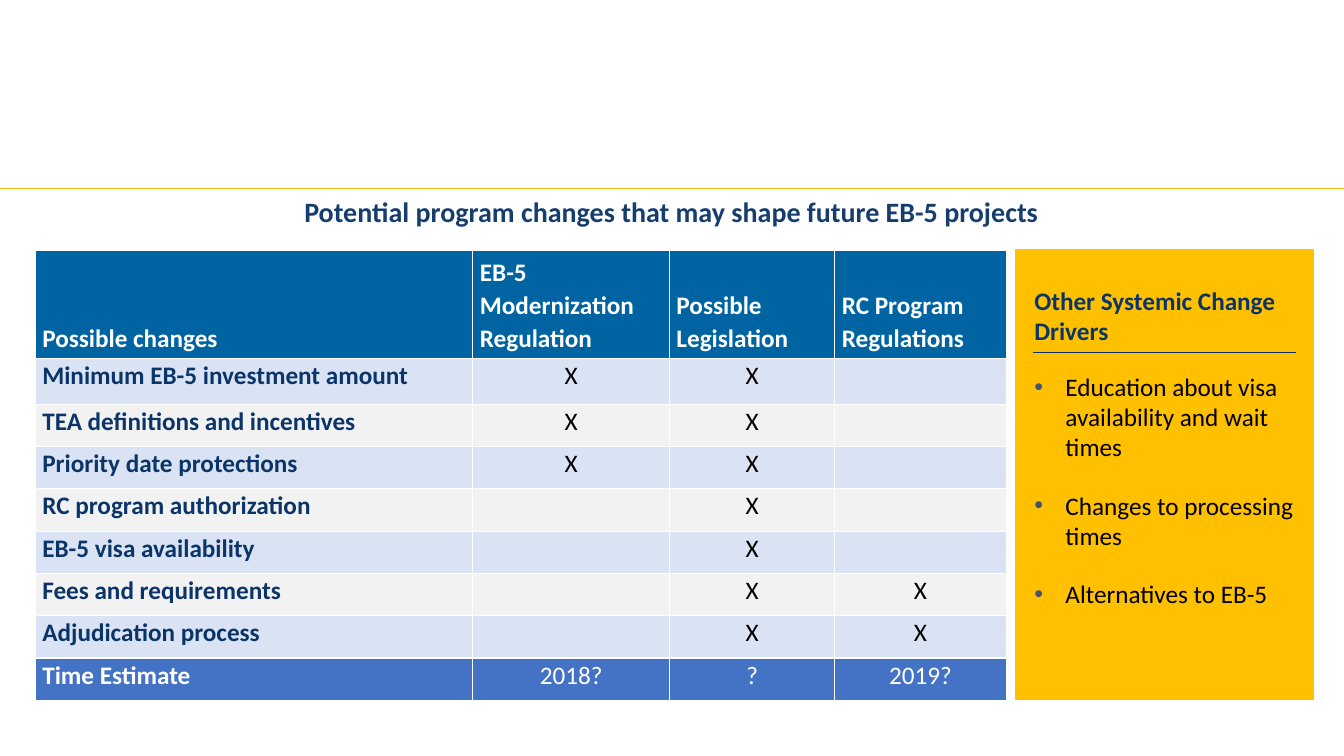
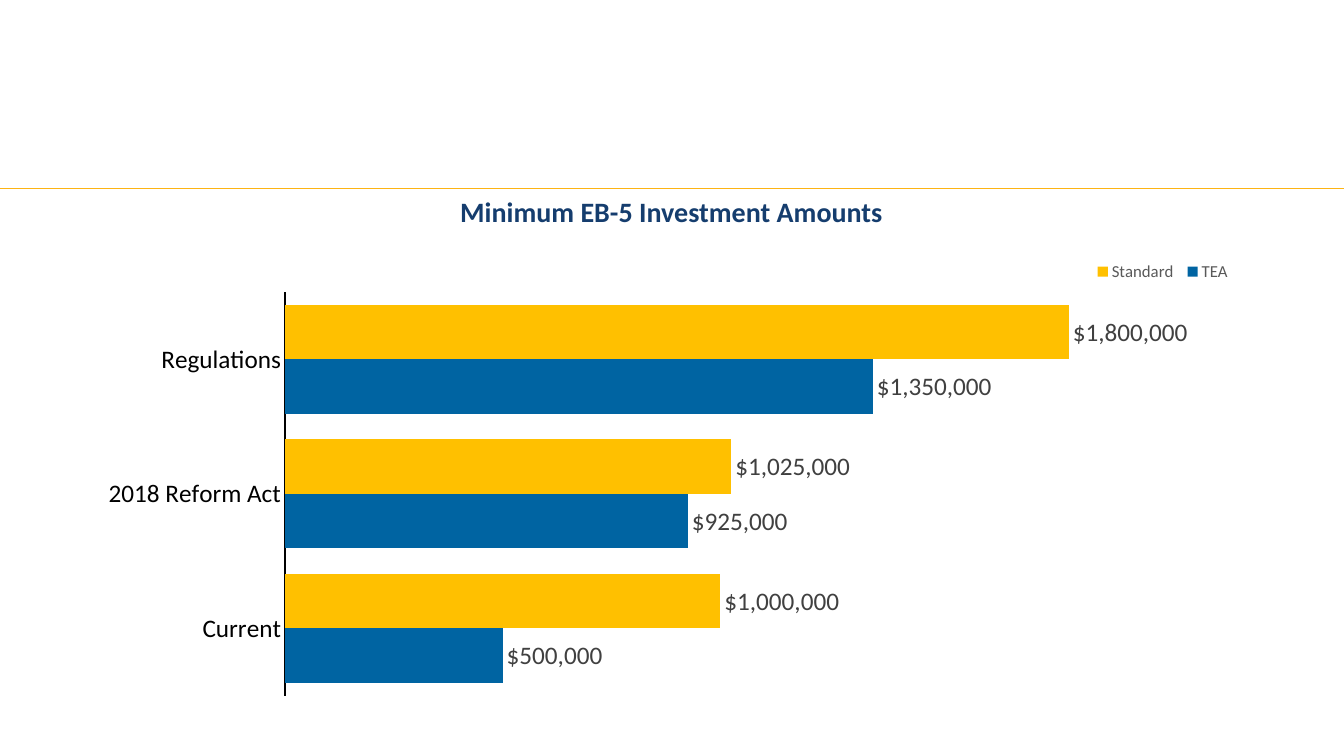
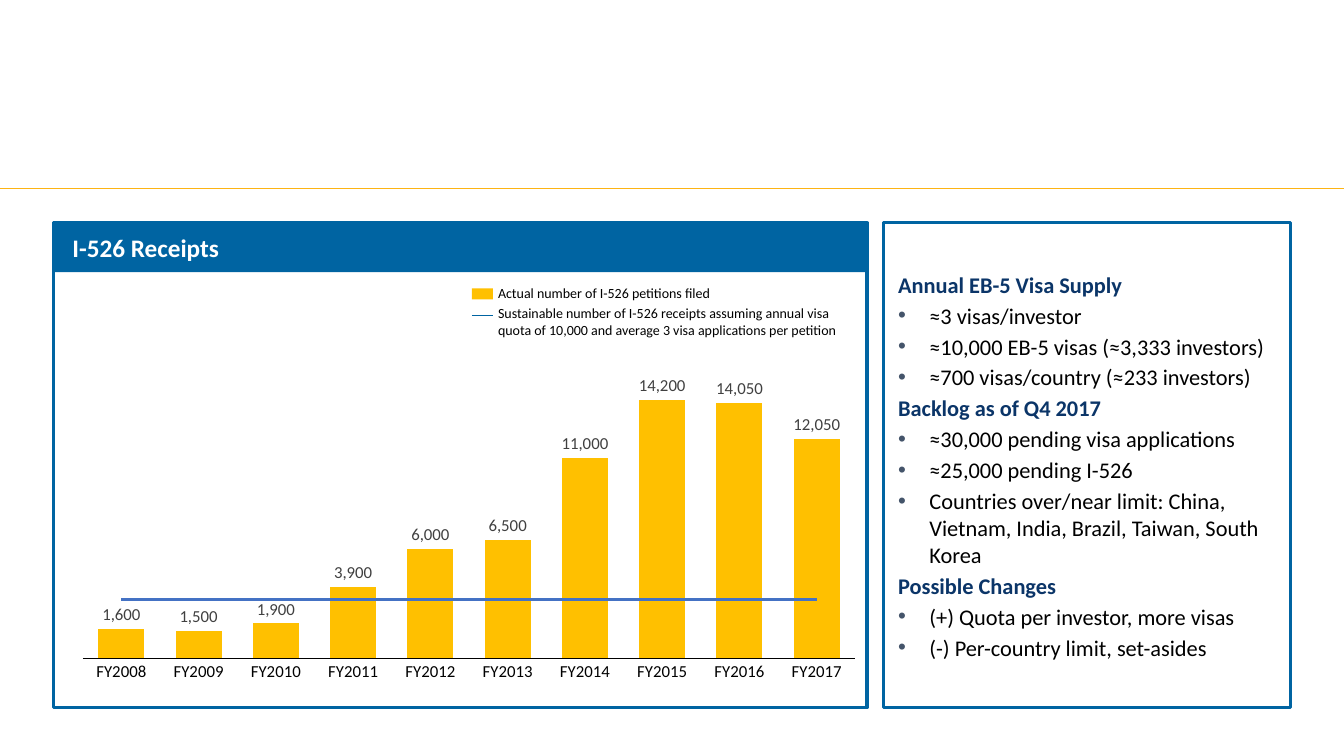
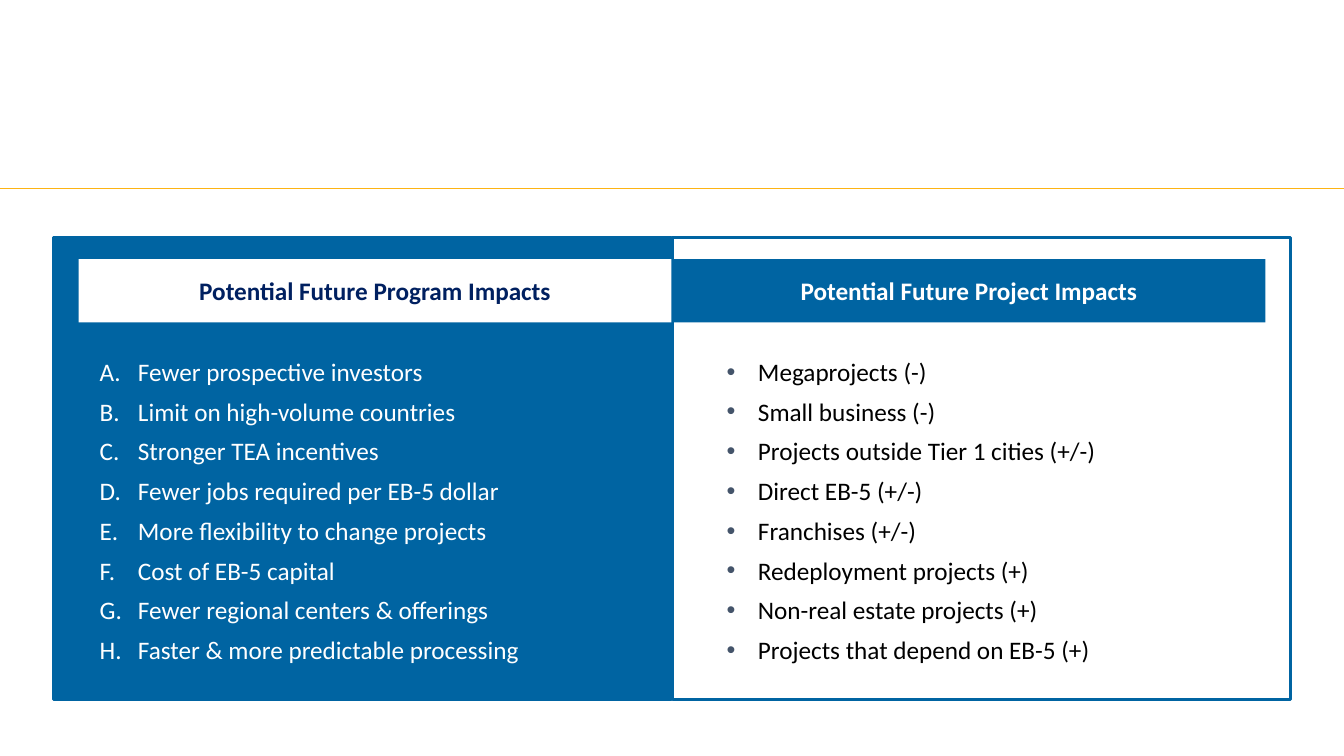
from lxml import etree
from pptx import Presentation
from pptx.chart.data import CategoryChartData
from pptx.dml.color import RGBColor
from pptx.enum.chart import XL_CHART_TYPE, XL_LABEL_POSITION, XL_LEGEND_POSITION, XL_MARKER_STYLE, XL_TICK_MARK
from pptx.enum.shapes import MSO_CONNECTOR, MSO_SHAPE
from pptx.enum.text import MSO_ANCHOR, PP_ALIGN
from pptx.oxml.ns import qn
from pptx.util import Inches, Pt

BLUE = RGBColor(0x00, 0x64, 0xA2)
GOLD = RGBColor(0xFF, 0xC0, 0x00)
RULE_GOLD = RGBColor(0xFD, 0xB4, 0x14)
NAVY = RGBColor(0x0B, 0x35, 0x68)
TITLE_NAVY = RGBColor(0x15, 0x3D, 0x6E)
DARK_NAVY = RGBColor(0x00, 0x20, 0x60)
MID_BLUE = RGBColor(0x44, 0x72, 0xC4)
PALE_BLUE = RGBColor(0xDA, 0xE3, 0xF3)
PALE_GRAY = RGBColor(0xF2, 0xF2, 0xF2)
SLATE = RGBColor(0x44, 0x54, 0x6A)
LABEL_GRAY = RGBColor(0x40, 0x40, 0x40)
LEGEND_GRAY = RGBColor(0x59, 0x59, 0x59)
WHITE = RGBColor(0xFF, 0xFF, 0xFF)
BLACK = RGBColor(0x00, 0x00, 0x00)

FONT = "Calibri"
BAR = XL_CHART_TYPE.BAR_CLUSTERED
COLUMN = XL_CHART_TYPE.COLUMN_CLUSTERED
OUTSIDE_END = XL_LABEL_POSITION.OUTSIDE_END
LEGEND_BOTTOM = XL_LEGEND_POSITION.BOTTOM
NO_MARKER = XL_MARKER_STYLE.NONE
NO_TICK = XL_TICK_MARK.NONE
STRAIGHT = MSO_CONNECTOR.STRAIGHT
RECT = MSO_SHAPE.RECTANGLE
TOP, MIDDLE, BOTTOM = MSO_ANCHOR.TOP, MSO_ANCHOR.MIDDLE, MSO_ANCHOR.BOTTOM
LEFT, CENTER = PP_ALIGN.LEFT, PP_ALIGN.CENTER

SLIDE_W = 13.33
BULLET = {"tag": "a:buChar", "attrs": {"char": "•"}, "color": SLATE, "indent": 0.31}
LETTER = {"tag": "a:buAutoNum", "attrs": {"type": "alphaUcPeriod"}, "color": WHITE, "indent": 0.38}
NO_INSETS = dict.fromkeys(("margin_left", "margin_top", "margin_right", "margin_bottom"), 0)

CHANGES = [
    ("Possible changes", "EB-5 Modernization Regulation", "Possible Legislation", "RC Program Regulations"),
    ("Minimum EB-5 investment amount", "X", "X", ""),
    ("TEA definitions and incentives", "X", "X", ""),
    ("Priority date protections", "X", "X", ""),
    ("RC program authorization", "", "X", ""),
    ("EB-5 visa availability", "", "X", ""),
    ("Fees and requirements", "", "X", "X"),
    ("Adjudication process", "", "X", "X"),
    ("Time Estimate", "2018?", "?", "2019?"),
]
DRIVERS = [
    ("Other Systemic Change Drivers", [
        "Education about visa availability and wait times",
        "Changes to processing times",
        "Alternatives to EB-5",
    ]),
]
SUPPLY = [
    ("Annual EB-5 Visa Supply", [
        "≈3 visas/investor",
        "≈10,000 EB-5 visas (≈3,333 investors)",
        "≈700 visas/country (≈233 investors)",
    ]),
    ("Backlog as of Q4 2017", [
        "≈30,000 pending visa applications",
        "≈25,000 pending I-526",
        "Countries over/near limit: China, Vietnam, India, Brazil, Taiwan, South Korea",
    ]),
    ("Possible Changes", [
        "(+) Quota per investor, more visas",
        "(-) Per-country limit, set-asides",
    ]),
]
PROGRAM_IMPACTS = [
    "Fewer prospective investors",
    "Limit on high-volume countries",
    "Stronger TEA incentives",
    "Fewer jobs required per EB-5 dollar",
    "More flexibility to change projects",
    "Cost of EB-5 capital",
    "Fewer regional centers & offerings",
    "Faster & more predictable processing",
]
PROJECT_IMPACTS = [
    "Megaprojects (-)",
    "Small business (-)",
    "Projects outside Tier 1 cities (+/-)",
    "Direct EB-5 (+/-)",
    "Franchises (+/-)",
    "Redeployment projects (+)",
    "Non-real estate projects (+)",
    "Projects that depend on EB-5 (+)",
]
RECEIPTS = [1600, 1500, 1900, 3900, 6000, 6500, 11000, 14200, 14050, 12050]


def box(*lengths):
    return [Inches(n) for n in lengths]


def apply(obj, values):
    for name, value in values.items():
        setattr(obj, name, value)


def set_font(font, size, color, bold=False):
    apply(font, {"name": FONT, "size": Pt(size), "bold": bold})
    font.color.rgb = color


def set_bullet(p, bullet):
    pPr = p._p.get_or_add_pPr()
    indent = Inches(bullet["indent"])
    pPr.set("marL", str(indent))
    pPr.set("indent", str(-indent))
    color = etree.SubElement(pPr, qn("a:buClr"))
    etree.SubElement(color, qn("a:srgbClr"), val=str(bullet["color"]))
    etree.SubElement(pPr, qn("a:buFont"), typeface="Arial" if bullet is BULLET else FONT)
    etree.SubElement(pPr, qn(bullet["tag"]), **bullet["attrs"])


def write(p, text, size, color, bold=False, bullet=None, **fmt):
    if bullet:
        set_bullet(p, bullet)
    apply(p, fmt)
    r = p.add_run()
    r.text = text
    set_font(r.font, size, color, bold)


def add_text(slide, at, items, size, gap=0, anchor=MIDDLE, after=0, **frame):
    tf = slide.shapes.add_textbox(*box(*at)).text_frame
    apply(tf, {"word_wrap": True, "vertical_anchor": anchor, **frame})
    for i, item in enumerate(items):
        p = tf.paragraphs[0] if i == 0 else tf.add_paragraph()
        spacing = {"space_before": Pt(gap if i else 0)}
        if after and item.get("bullet"):
            spacing["space_after"] = Pt(after)
        write(p, size=size, **spacing, **item)


def listing(texts, color, bullet=None):
    return [{"text": text, "color": color, "bullet": bullet} for text in texts]


def sections(groups):
    items = []
    for heading, points in groups:
        items.append({"text": heading, "color": NAVY, "bold": True})
        items += listing(points, BLACK, BULLET)
    return items


def add_label(slide, at, text, size, color, align=LEFT, **frame):
    add_text(slide, at, [{"text": text, "color": color, "bold": True, "alignment": align}], size, **frame)


def add_rect(slide, at, fill, line=None, width=2.25):
    sp = slide.shapes.add_shape(RECT, *box(*at))
    sp.shadow.inherit = False
    sp.fill.solid()
    sp.fill.fore_color.rgb = fill
    if line is None:
        sp.line.fill.background()
    else:
        sp.line.color.rgb = line
        sp.line.width = Pt(width)


def add_rule(slide, x, y, length, color, width=0.5):
    line = slide.shapes.add_connector(STRAIGHT, *box(x, y, x + length, y))
    line.line.color.rgb = color
    line.line.width = Pt(width)
    etree.SubElement(line._element.spPr, qn("a:effectLst"))


def new_slide(prs, title=None):
    slide = prs.slides.add_slide(prs.slide_layouts[6])
    add_rule(slide, 0, 1.87, SLIDE_W, RULE_GOLD)
    if title:
        item = {"text": title, "color": TITLE_NAVY, "bold": True, "alignment": CENTER, "line_spacing": 0.9}
        add_text(slide, (0.26, 1.97, 12.8, 0.3), [item], 20, anchor=TOP, **NO_INSETS)
    return slide


def add_changes_table(slide):
    widths = (4.34, 1.95, 1.64, 1.7)
    heights = (1.08, 0.45) + (0.42,) * 7
    last = len(CHANGES) - 1
    table = slide.shapes.add_table(len(CHANGES), len(widths), *box(0.35, 2.48, sum(widths), sum(heights))).table
    table.horz_banding = False
    for column, width in zip(table.columns, widths):
        column.width = Inches(width)
    for i, (row, height, texts) in enumerate(zip(table.rows, heights, CHANGES)):
        row.height = Inches(height)
        header = i == 0
        fill = BLUE if header else MID_BLUE if i == last else PALE_BLUE if i % 2 else PALE_GRAY
        edge = Inches(0.05 if header else 0)
        for j, (cell, text) in enumerate(zip(row.cells, texts)):
            apply(cell, {
                "margin_left": Inches(0.07), "margin_right": Inches(0.07),
                "margin_top": edge, "margin_bottom": edge,
                "vertical_anchor": BOTTOM if header else TOP,
            })
            cell.fill.solid()
            cell.fill.fore_color.rgb = fill
            color = WHITE if header or i == last else BLACK if j else NAVY
            if text:
                write(cell.text_frame.paragraphs[0], text, 18, color, header or j == 0,
                      alignment=CENTER if j and not header else LEFT, line_spacing=1.07)


def set_layout(parent, index, x, y, w, h, inner=False):
    for old in parent.findall(qn("c:layout")):
        parent.remove(old)
    layout = etree.Element(qn("c:layout"))
    manual = etree.SubElement(layout, qn("c:manualLayout"))
    values = {"layoutTarget": "inner"} if inner else {}
    values.update(xMode="edge", yMode="edge", x=x, y=y, w=w, h=h)
    for name, value in values.items():
        etree.SubElement(manual, qn("c:" + name), val=str(value))
    parent.insert(index, layout)


def add_bars(slide, kind, at, cats, series, size, maximum, gap, overlap, plot_at):
    data = CategoryChartData()
    data.categories = cats
    for name, values in series:
        data.add_series(name, values)
    chart = slide.shapes.add_chart(kind, *box(*at), data).chart
    apply(chart, {"has_title": False, "has_legend": False})
    set_font(chart.font, size, BLACK)
    apply(chart.value_axis, {
        "visible": False, "has_major_gridlines": False, "minimum_scale": 0, "maximum_scale": maximum,
    })
    axis = chart.category_axis
    apply(axis, {"major_tick_mark": NO_TICK, "minor_tick_mark": NO_TICK})
    axis.format.line.color.rgb = BLACK
    axis.format.line.width = Pt(0.75)
    set_font(axis.tick_labels.font, size, BLACK)
    apply(chart.plots[0], {"gap_width": gap, "overlap": overlap, "vary_by_categories": False})
    set_layout(chart._chartSpace.chart.plotArea, 0, *plot_at, inner=True)
    return chart


def style_bars(ser, color, size, number_format):
    ser.format.fill.solid()
    ser.format.fill.fore_color.rgb = color
    labels = ser.data_labels
    apply(labels, {
        "show_value": True, "position": OUTSIDE_END,
        "number_format": number_format, "number_format_is_linked": False,
    })
    set_font(labels.font, size, LABEL_GRAY)


def second_series_as_line(chart, color):
    bars = chart._chartSpace.chart.plotArea.find(qn("c:barChart"))
    ser = bars.findall(qn("c:ser"))[1]
    for invert in ser.findall(qn("c:invertIfNegative")):
        ser.remove(invert)
    lines = bars.makeelement(qn("c:lineChart"))
    etree.SubElement(lines, qn("c:grouping"), val="standard")
    etree.SubElement(lines, qn("c:varyColors"), val="0")
    lines.append(ser)
    etree.SubElement(lines, qn("c:marker"), val="1")
    for axis in bars.findall(qn("c:axId")):
        etree.SubElement(lines, qn("c:axId"), val=axis.get("val"))
    bars.addnext(lines)
    line = chart.plots[1].series[0]
    line.smooth = False
    line.marker.style = NO_MARKER
    line.format.line.color.rgb = color
    line.format.line.width = Pt(2.25)


def changes_slide(prs):
    slide = new_slide(prs, "Potential program changes that may shape future EB-5 projects")
    add_rect(slide, (10.07, 2.48, 2.96, 4.46), GOLD, GOLD, 1)
    add_changes_table(slide)
    add_text(slide, (10.16, 2.69, 2.77, 3.49), sections(DRIVERS), 18, gap=18, after=2)
    add_rule(slide, 10.25, 3.5, 2.6, NAVY)


def amounts_slide(prs):
    slide = new_slide(prs, "Minimum EB-5 Investment Amounts")
    series = [("TEA", (500000, 925000, 1350000)), ("Standard", (1000000, 1025000, 1800000))]
    chart = add_bars(slide, BAR, (1.07, 2.44, 11.19, 4.62), ("Current", "2018 Reform Act", "Regulations"),
                     series, 18, 2000000, 47, 0, (0.157, 0.099, 0.772, 0.867))
    for ser, color in zip(chart.plots[0].series, (BLUE, GOLD)):
        style_bars(ser, color, 18, '"$"#,##0')
    chart.has_legend = True
    legend = chart.legend
    apply(legend, {"position": LEGEND_BOTTOM, "include_in_layout": False})
    set_font(legend.font, 12, LEGEND_GRAY)
    set_layout(legend._element, 1, 0.87, 0.02, 0.13, 0.07)


def receipts_slide(prs):
    slide = new_slide(prs)
    for x, width in ((8.76, 4.04), (0.53, 8.07)):
        add_rect(slide, (x, 2.21, width, 4.81), WHITE, BLUE)
    add_text(slide, (8.81, 2.55, 3.93, 4.14), sections(SUPPLY), 16, gap=2.9)
    add_rect(slide, (0.53, 2.21, 8.07, 0.49), BLUE)
    add_label(slide, (0.62, 2.26, 6.59, 0.4), "I-526 Receipts", 18, WHITE)
    years = [f"FY{year}" for year in range(2008, 2018)]
    series = [("Series 1", RECEIPTS), ("Series 2", [3200] * len(years))]
    chart = add_bars(slide, COLUMN, (0.64, 3.62, 7.86, 3.28), years, series, 12, 16000, 68, -27,
                     (0.023, 0.007, 0.975, 0.88))
    second_series_as_line(chart, MID_BLUE)
    style_bars(chart.plots[0].series[0], GOLD, 12, "#,##0")
    legend = listing([
        "Actual number of I-526 petitions filed",
        "Sustainable number of I-526 receipts assuming annual visa quota of 10,000 "
        "and average 3 visa applications per petition",
    ], BLACK)
    add_text(slide, (4.94, 2.82, 3.46, 0.54), legend, 10, gap=2, **NO_INSETS)
    add_rect(slide, (4.68, 2.86, 0.21, 0.11), GOLD)
    add_rule(slide, 4.68, 3.13, 0.21, BLUE, 1)


def impacts_slide(prs):
    slide = new_slide(prs)
    for x, fill in ((6.67, WHITE), (0.53, BLUE)):
        add_rect(slide, (x, 2.36, 6.13, 4.58), fill, BLUE)
    program = listing(PROGRAM_IMPACTS, WHITE, LETTER)
    project = listing(PROJECT_IMPACTS, BLACK, BULLET)
    for x, width, items in ((0.89, 5.66, program), (7.11, 5, project)):
        add_text(slide, (x, 3.38, width, 3.37), items, 18, gap=6.8)
    headings = (
        (0.78, "Potential Future Program Impacts", WHITE, DARK_NAVY),
        (6.67, "Potential Future Project Impacts", BLUE, WHITE),
    )
    for x, text, fill, color in headings:
        add_rect(slide, (x, 2.57, 5.88, 0.63), fill)
        add_label(slide, (x, 2.73, 5.88, 0.3), text, 18, color, CENTER, anchor=TOP, **NO_INSETS)


def main():
    prs = Presentation()
    prs.slide_width, prs.slide_height = box(SLIDE_W, 7.5)
    for build in (changes_slide, amounts_slide, receipts_slide, impacts_slide):
        build(prs)
    prs.save("out.pptx")


if __name__ == "__main__":
    main()
